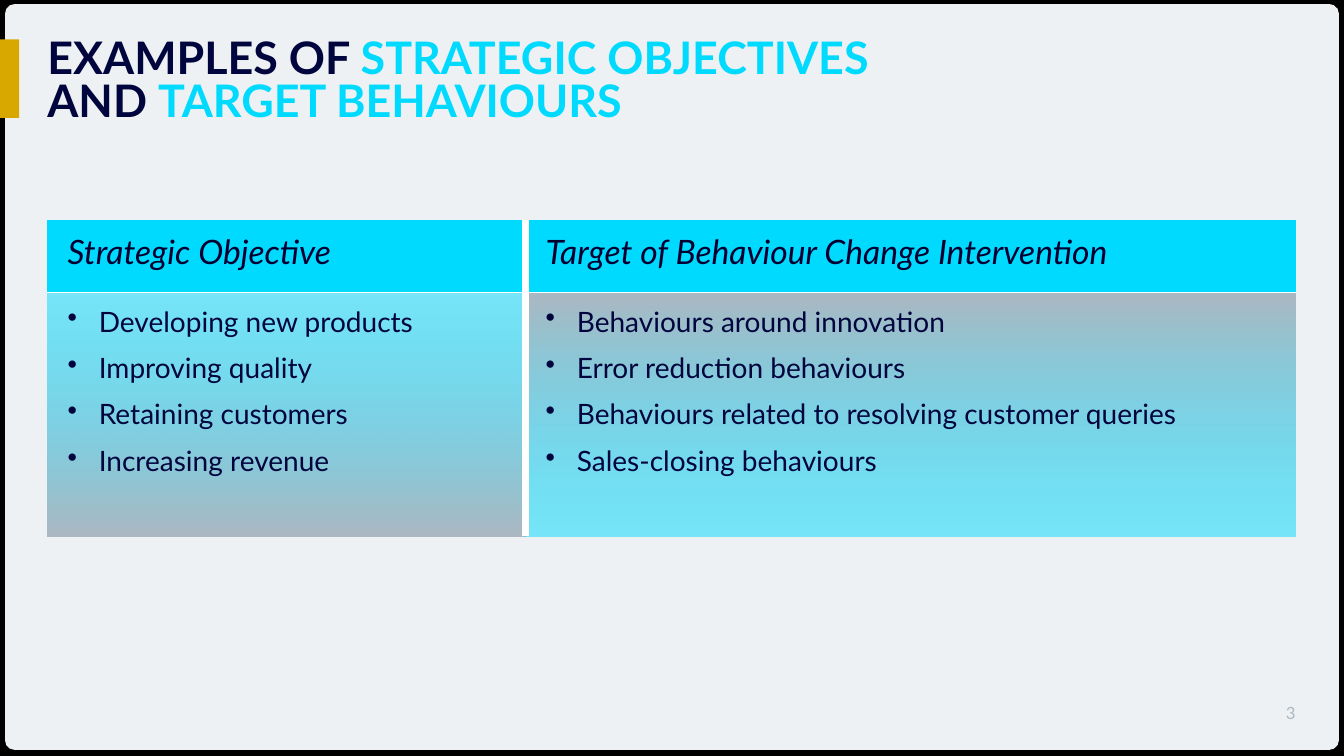
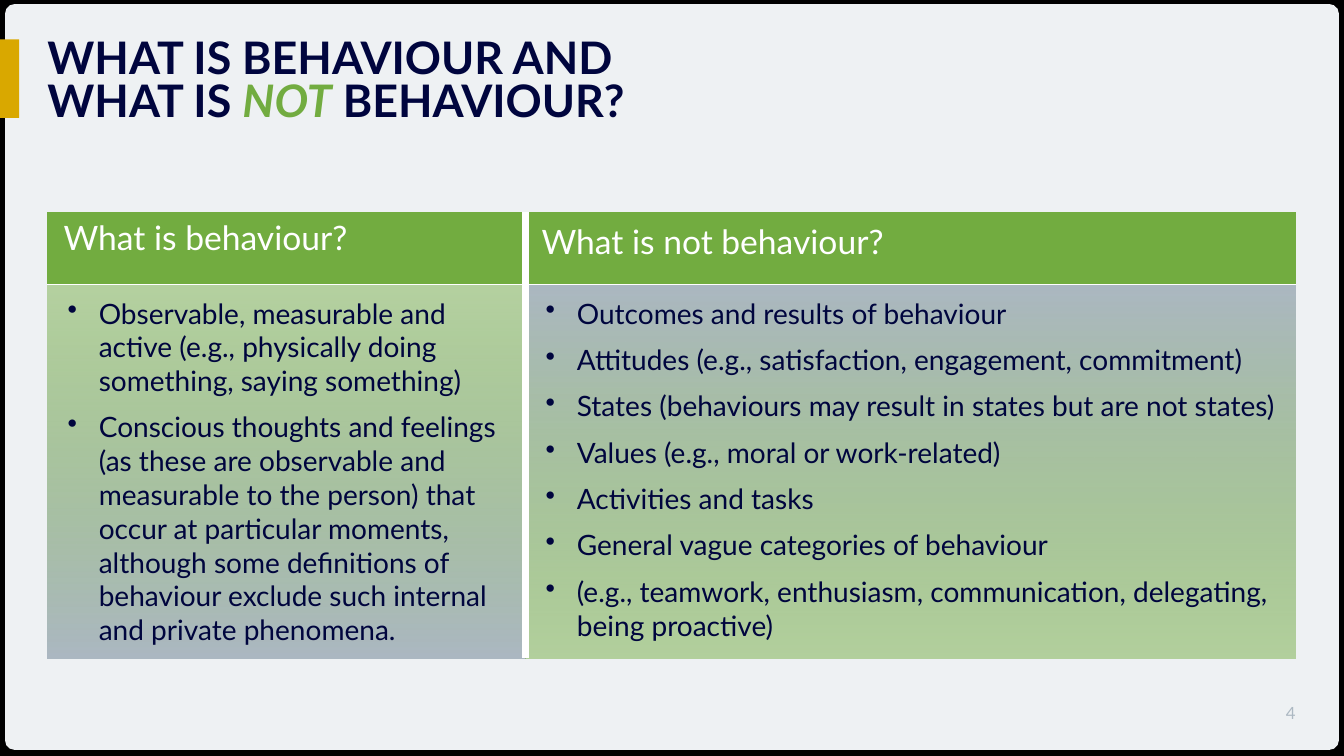
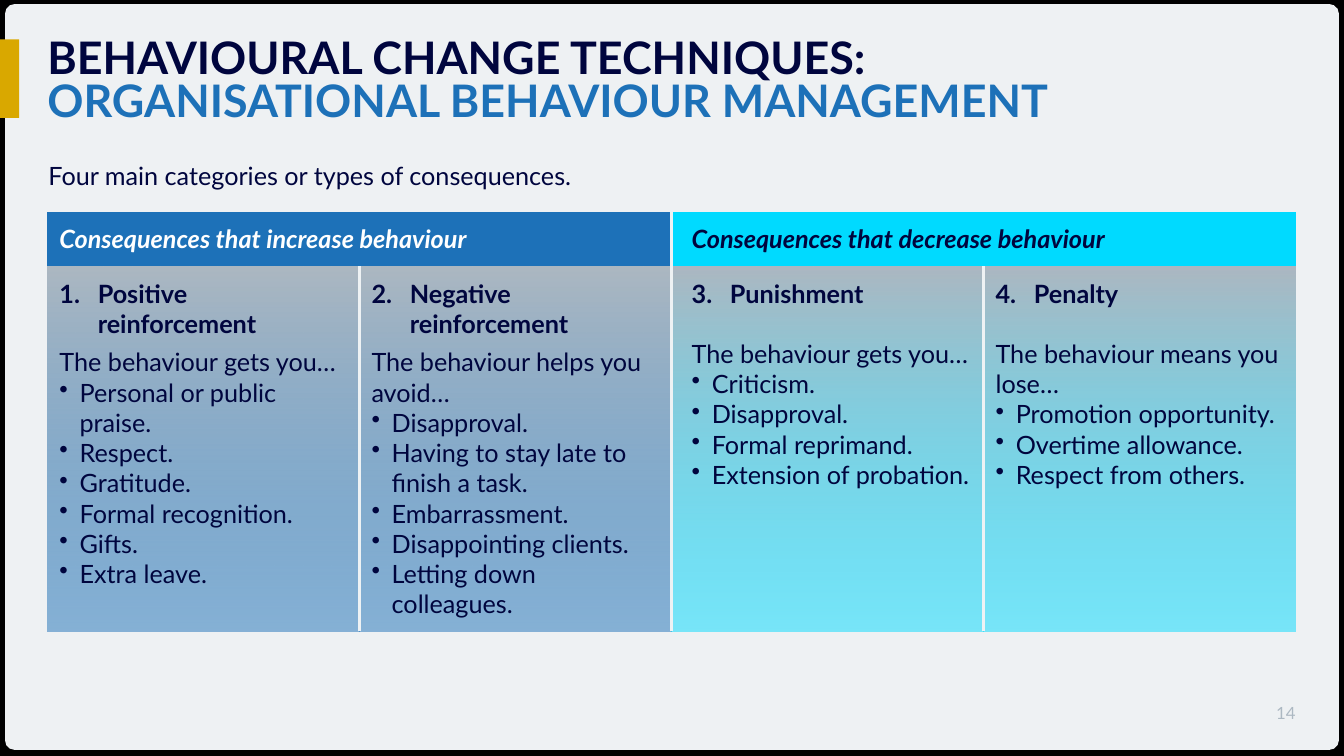
import pptx
import pptx.dml.color
import pptx.enum.shapes
import pptx.enum.text
import pptx.oxml
import pptx.oxml.ns
import pptx.util

RGB = pptx.dml.color.RGBColor
Inches, Pt = pptx.util.Inches, pptx.util.Pt
SHAPE = pptx.enum.shapes.MSO_SHAPE
ALIGN = pptx.enum.text.PP_ALIGN
ANCHOR = pptx.enum.text.MSO_ANCHOR
qn = pptx.oxml.ns.qn

BLACK, WHITE = RGB(0, 0, 0), RGB(255, 255, 255)
PAPER, RULE = RGB(0xEE, 0xF1, 0xF3), RGB(0xEE, 0xF2, 0xF4)
GOLD, GREY = RGB(0xD9, 0xA8, 0x00), RGB(0xAC, 0xB8, 0xC2)
NAVY, INK = RGB(0x00, 0x05, 0x3E), RGB(0x00, 0x00, 0x30)
CYAN, GREEN, BLUE = RGB(0x00, 0xDA, 0xFF), RGB(0x72, 0xAC, 0x40), RGB(0x1D, 0x71, 0xB8)
FACE = "Lato"
NO_STYLE = "{2D5ABB26-0587-4C30-8999-92F81FD0307C}"
WIDE, HIGH = 13.33, 7.5
LEFT, SPAN = 0.47, 12.38

# heads: text, fill, ink, insets (left, top, right, bottom)
# cells: gradient as (colour, opacity) pairs, name, lead, space before lead, items
EVEN = (0.2, 0.12, 0.2, 0.12)
SLIM = (0.12, 0.12, 0.12, 0.12)
DEEP = (0.2, 0.12, 0.12, 0.12)
GREY_BLUE = ((GREY, 100), (BLUE, 50))
GREY_CYAN = ((GREY, 100), (CYAN, 50))
HALVES = [0.383, 0.617]
PAGES = [
    dict(
        no=3, top=2.18, shares=HALVES, rows=[0.72, 2.42], line=(WHITE, 6), rule=True,
        size=20, hang=0.31, gap=9, pads=[EVEN, EVEN], note=None,
        title=[[("EXAMPLES OF ", NAVY), ("STRATEGIC OBJECTIVES", CYAN)],
               [("AND ", NAVY), ("TARGET BEHAVIOURS", CYAN)]],
        look=dict(size=24, bold=False, italic=True),
        heads=[("Strategic Objective", CYAN, INK, EVEN),
               ("Target of Behaviour Change Intervention", CYAN, INK, EVEN)],
        cells=[
            (((CYAN, 50), (GREY, 100)), None, None, 0,
             ["Developing new products", "Improving quality",
              "Retaining customers", "Increasing revenue"]),
            (GREY_CYAN, None, None, 0,
             ["Behaviours around innovation", "Error reduction behaviours",
              "Behaviours related to resolving customer queries",
              "Sales-closing behaviours"]),
        ]),
    dict(
        no=4, top=2.1, shares=HALVES, rows=[0.72, 3.71], line=(WHITE, 6), rule=True,
        size=20, hang=0.31, gap=9, pads=[EVEN, EVEN], note=None,
        title=[[("WHAT IS BEHAVIOUR AND", NAVY)],
               [("WHAT IS ", NAVY), ("NOT", GREEN), (" BEHAVIOUR?", NAVY)]],
        look=dict(size=24, bold=False, italic=False),
        heads=[("What is behaviour?", GREEN, WHITE, (0.16, 0.06, 0.21, 0.06)),
               ("What is not behaviour?", GREEN, WHITE, (0.16, 0.1, 0.06, 0.06))],
        cells=[
            (((GREEN, 46), (GREY, 100)), None, None, 0,
             ["Observable, measurable and active (e.g., physically doing something, "
              "saying something)",
              "Conscious thoughts and feelings (as these are observable and measurable "
              "to the person) that occur at particular moments, although some "
              "definitions of behaviour exclude such internal and private phenomena."]),
            (((GREY, 100), (GREEN, 48)), None, None, 0,
             ["Outcomes and results of behaviour",
              "Attitudes (e.g., satisfaction, engagement, commitment)",
              "States (behaviours may result in states but are not states)",
              "Values (e.g., moral or work-related)", "Activities and tasks",
              "General vague categories of behaviour",
              "(e.g., teamwork, enthusiasm, communication, delegating, "
              "being proactive)"]),
        ]),
    dict(
        no=14, top=2.1, shares=[0.25] * 4, rows=[0.54, 3.62], line=(RULE, 3), rule=False,
        size=18, hang=0.2, gap=0, pads=[SLIM, SLIM, DEEP, SLIM],
        note="Four main categories or types of consequences.",
        title=[[("BEHAVIOURAL CHANGE TECHNIQUES:", NAVY)],
               [("ORGANISATIONAL BEHAVIOUR MANAGEMENT", BLUE)]],
        look=dict(size=18, bold=True, italic=True),
        heads=[("Consequences that increase behaviour", BLUE, WHITE, SLIM),
               ("Consequences that decrease behaviour", CYAN, NAVY, DEEP)],
        cells=[
            (GREY_BLUE, "Positive reinforcement", "The behaviour gets you…", 6,
             ["Personal or public praise.", "Respect.", "Gratitude.",
              "Formal recognition.", "Gifts.", "Extra leave."]),
            (GREY_BLUE, "Negative reinforcement", "The behaviour helps you avoid…", 6,
             ["Disapproval.", "Having to stay late to finish a task.",
              "Embarrassment.", "Disappointing clients.", "Letting down colleagues."]),
            (GREY_CYAN, "Punishment", "The behaviour gets you…", 21.6,
             ["Criticism.", "Disapproval.", "Formal reprimand.",
              "Extension of probation."]),
            (GREY_CYAN, "Penalty", "The behaviour means you lose…", 21.6,
             ["Promotion opportunity.", "Overtime allowance.", "Respect from others."]),
        ]),
]


def write(para, text, size, ink, bold=False, italic=False, hang=0, mark=None):
    """Fill a paragraph; mark is a bullet character or a start number."""
    if mark:
        props = para._p.get_or_add_pPr()
        props.set("marL", str(Inches(hang)))
        props.set("indent", str(-Inches(hang)))
        if isinstance(mark, int):
            tag = pptx.oxml.ns.nsdecls("a")
            props.append(pptx.oxml.parse_xml(
                f'<a:buAutoNum {tag} type="arabicPeriod" startAt="{mark}"/>'))
        else:
            tag = pptx.oxml.ns.nsdecls("a")
            props.append(pptx.oxml.parse_xml(f'<a:buChar {tag} char="{mark}"/>'))
    para.text = text
    font = para.font
    font.name, font.size, font.bold, font.italic = FACE, Pt(size), bold, italic
    font.color.rgb = ink


def frame(cell, pads, edges):
    """Set the insets of a cell and its borders: edges maps a side to (colour, points)."""
    (cell.margin_left, cell.margin_top,
     cell.margin_right, cell.margin_bottom) = map(Inches, pads)
    props = cell._tc.get_or_add_tcPr()
    sides = [side for side in "LRTB" if side in edges]
    for at, side in enumerate(sides):
        ink, width = edges[side]
        props.insert(at, pptx.oxml.parse_xml(
            f'<a:ln{side} {pptx.oxml.ns.nsdecls("a")} w="{Pt(width)}">'
            f'<a:solidFill><a:srgbClr val="{ink}"/></a:solidFill></a:ln{side}>'))


deck = pptx.Presentation()
deck.slide_width, deck.slide_height = Inches(WIDE), Inches(HIGH)
layout = deck.slide_layouts[5]
slides = [deck.slides.add_slide(layout) for page in PAGES]

# Backdrop, drawn once and handed to the layout
for at, (kind, x, y, w, h, ink) in enumerate([
        (SHAPE.RECTANGLE, 0, 0, WIDE, HIGH, BLACK),
        (SHAPE.ROUNDED_RECTANGLE, 0.05, 0.04, WIDE - 0.1, HIGH - 0.1, PAPER),
        (SHAPE.RECTANGLE, 0, 0.39, 0.19, 0.78, GOLD)]):
    panel = slides[0].shapes.add_shape(kind, Inches(x), Inches(y), Inches(w), Inches(h))
    panel.shadow.inherit = False
    panel.fill.solid()
    panel.fill.fore_color.rgb = ink
    panel.line.fill.background()
    if kind == SHAPE.ROUNDED_RECTANGLE:
        panel.adjustments[0] = 0.013
    layout.shapes.element.insert(2 + at, panel.element)

for slide, page in zip(slides, PAGES):
    # Title
    title = slide.shapes.title
    title.left, title.top = Inches(LEFT), Inches(0.39)
    title.width, title.height = Inches(11.76), Inches(0.86)
    body = title.text_frame
    body.margin_left = body.margin_top = body.margin_right = body.margin_bottom = 0
    body.vertical_anchor = ANCHOR.BOTTOM
    body.auto_size = pptx.enum.text.MSO_AUTO_SIZE.NONE
    para = body.paragraphs[0]
    para.alignment, para.line_spacing = ALIGN.LEFT, 0.8
    para.font.name, para.font.size, para.font.bold = FACE, Pt(32), True
    for at, line in enumerate(page["title"]):
        if at:
            para.add_line_break()
        for text, ink in line:
            run = para.add_run()
            run.text = text
            run.font.color.rgb = ink
            if ink == GREEN:
                run.font.italic = True

    # Note under the title and page number
    labels = [(str(page["no"]), 12.42, 6.97, 0.43, 0.2, 12, GREY, ALIGN.RIGHT)]
    if page["note"]:
        labels.append((page["note"], 0.48, 1.59, SPAN, 0.3, 18, NAVY, ALIGN.LEFT))
    for text, x, y, w, h, size, ink, side in labels:
        box = slide.shapes.add_textbox(Inches(x), Inches(y), Inches(w), Inches(h))
        body = box.text_frame
        body.word_wrap = True
        body.margin_left = body.margin_top = body.margin_right = body.margin_bottom = 0
        body.vertical_anchor = ANCHOR.MIDDLE
        write(body.paragraphs[0], text, size, ink)
        body.paragraphs[0].alignment = side

    # Table
    shares, heads = page["shares"], page["heads"]
    count = len(shares)
    step = count // len(heads)
    holder = slide.shapes.add_table(2, count, Inches(LEFT), Inches(page["top"]),
                                    Inches(SPAN), Inches(sum(page["rows"])))
    table = holder.table
    table.first_row = table.horz_banding = False
    holder.element.find(".//" + qn("a:tableStyleId")).text = NO_STYLE
    for col, share in zip(table.columns, shares):
        col.width = Inches(SPAN * share)
    for row, tall in zip(table.rows, page["rows"]):
        row.height = Inches(tall)

    for c in range(count):
        text, fill, ink, pads = heads[c // step]
        head = table.cell(0, c)
        edges = {"B": (WHITE, 1)} if page["rule"] else {}
        if c and c % step == 0:
            edges["L"] = page["line"]
        if c < count - 1 and (c + 1) % step == 0:
            edges["R"] = page["line"]
        head.fill.solid()
        head.fill.fore_color.rgb = fill
        frame(head, pads, edges)
        if c % step == 0:
            if step > 1:
                head.merge(table.cell(0, c + step - 1))
            write(head.text_frame.paragraphs[0], text, ink=ink, **page["look"])

        shades, name, lead, space, items = page["cells"][c]
        cell = table.cell(1, c)
        edges = {"T": (WHITE, 1)} if page["rule"] else {}
        if c:
            edges["L"] = page["line"]
        if c < count - 1:
            edges["R"] = page["line"]
        cell.fill.gradient()
        cell.fill.gradient_angle = 270
        for stop, (ink, share) in zip(cell.fill.gradient_stops, shades):
            stop.color.rgb = ink
        hues = cell._tc.get_or_add_tcPr().iter(qn("a:srgbClr"))
        for hue, (ink, share) in zip(list(hues), shades):
            if share < 100:
                hue.append(pptx.oxml.parse_xml(
                    f'<a:alpha {pptx.oxml.ns.nsdecls("a")} val="{share * 1000}"/>'))
        frame(cell, page["pads"][c], edges)

        lines = [(item, page["gap"], dict(hang=page["hang"], mark="•")) for item in items]
        if name:
            lines = [(name, 0, dict(bold=True, hang=0.38, mark=c + 1)),
                     (lead, space, {})] + lines
        for at, (text, gap, style) in enumerate(lines):
            body = cell.text_frame
            para = body.add_paragraph() if at else body.paragraphs[0]
            write(para, text, page["size"], NAVY, **style)
            para.space_before = Pt(gap if at else 0)

deck.save("out.pptx")
